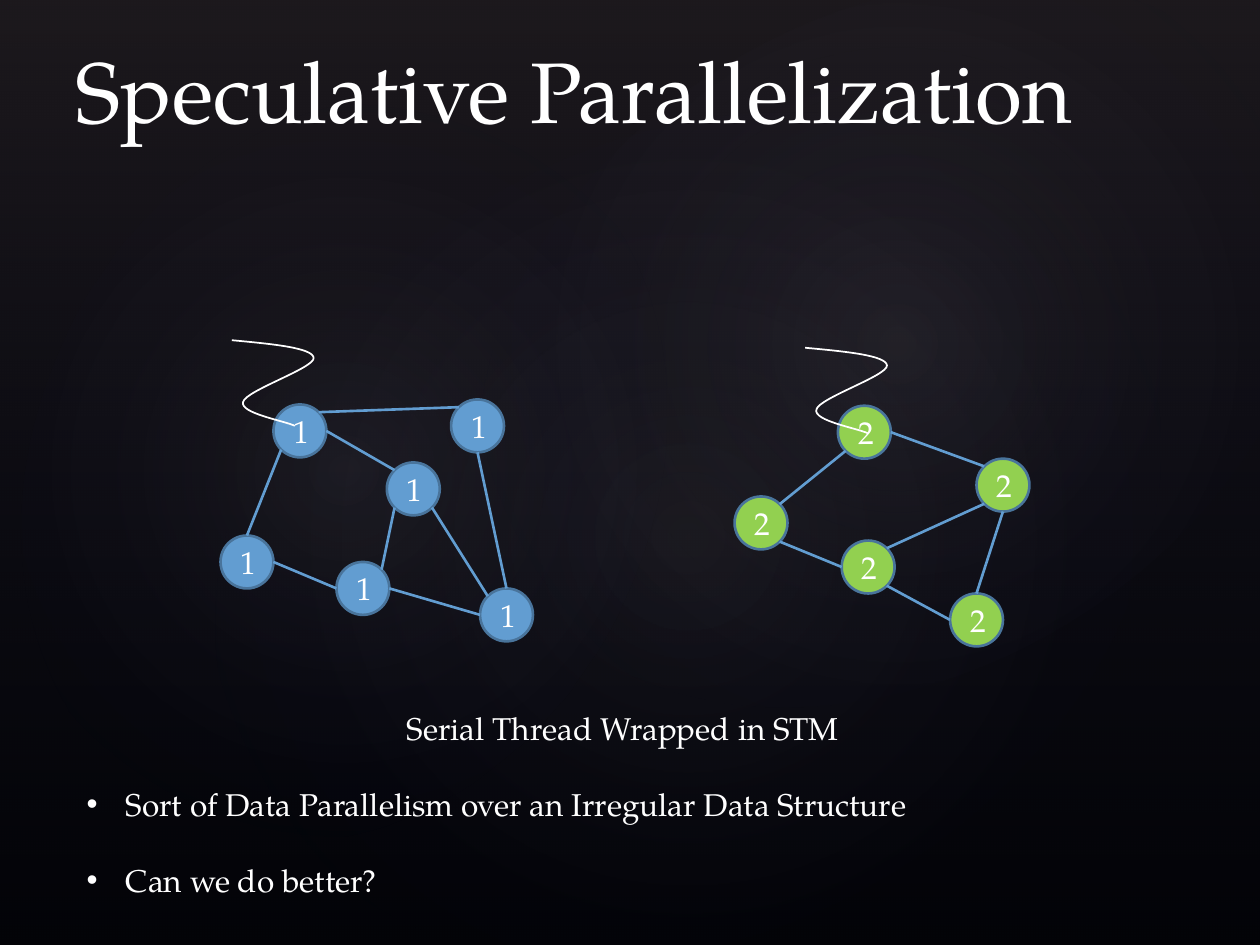
import math

import pptx
import pptx.dml.color
import pptx.enum.shapes
import pptx.enum.text
import pptx.oxml
import pptx.oxml.ns
import pptx.util
from lxml import etree

RGBColor = pptx.dml.color.RGBColor
Pt = pptx.util.Pt
ALIGN = pptx.enum.text.PP_ALIGN
ANCHOR = pptx.enum.text.MSO_ANCHOR
PRESET = pptx.enum.shapes.MSO_SHAPE
qn = pptx.oxml.ns.qn

BLACK = RGBColor(0x00, 0x00, 0x00)
WHITE = RGBColor(0xFF, 0xFF, 0xFF)
BLUE = RGBColor(0x62, 0x9D, 0xD1)
GREEN = RGBColor(0x92, 0xD0, 0x50)
OUTLINE = RGBColor(0x49, 0x74, 0x9B)
PLUM = RGBColor(0x50, 0x46, 0x52)
NAVY = RGBColor(0x24, 0x28, 0x52)
MIST = RGBColor(0xC4, 0xBC, 0xC6)

FONT = "TeX Gyre Pagella"
COLUMNS, ROWS = 100, 75
CELL = pptx.util.Inches(0.1)
NODE = 4.2
TOP, TOP_LEFT, LEFT, BOTTOM_LEFT, BOTTOM, BOTTOM_RIGHT, RIGHT, TOP_RIGHT = range(8)
DOWNWARD = '<a:lin ang="5400000" scaled="0"/>'
RADIAL = '<a:path path="circle"><a:fillToRect l="50000" t="50000" r="50000" b="50000"/></a:path>'
GLOWS = [
    ((15, 11.4, 79.2, 62.4), 328.7, 7),
    ((-3, 12.8, 60.6, 49), 294.3, 8),
    ((35.8, 1.3, 70.9, 52), 328.7, 8),
]
THREAD = [(0, 0), (3.2, 0.3), (6.4, 0.6), (6.5, 1.4), (6.6, 2.2),
          (1.1, 4), (0.9, 4.9), (0.6, 5.8), (4.2, 6.4), (5, 6.8)]


def cells(*counts):
    """Turn grid counts into lengths."""
    return [round(count * CELL) for count in counts]


def style(paragraph, size=18):
    """Give a paragraph the slide's type style."""
    paragraph.font.name = FONT
    paragraph.font.size = Pt(size)
    paragraph.font.color.rgb = WHITE


def add_tint(slide, kind, box, stops, direction, rotation=0):
    """Add a translucent gradient shape; stops are (position, colour, opacity)."""
    tint = slide.shapes.add_shape(kind, *cells(*box))
    tint.shadow.inherit = False
    tint.rotation = rotation
    tint.line.fill.background()
    tint.fill.gradient()
    marks = "".join(
        f'<a:gs pos="{position * 1000}"><a:srgbClr val="{colour}">'
        f'<a:alpha val="{opacity * 1000}"/></a:srgbClr></a:gs>'
        for position, colour, opacity in stops)
    gradient = pptx.oxml.parse_xml(
        f'<a:gradFill {pptx.oxml.ns.nsdecls("a")} rotWithShape="1">'
        f'<a:gsLst>{marks}</a:gsLst>{direction}</a:gradFill>')
    properties = tint._element.spPr
    properties.replace(properties.find(qn("a:gradFill")), gradient)


def add_backdrop(slide):
    """Paint the dark background and its soft glows."""
    slide.background.fill.solid()
    slide.background.fill.fore_color.rgb = BLACK
    add_tint(slide, PRESET.RECTANGLE, (0, 0, COLUMNS, ROWS),
             [(0, PLUM, 36), (100, NAVY, 10)], DOWNWARD)
    for box, rotation, opacity in GLOWS:
        add_tint(slide, PRESET.OVAL, box,
                 [(0, MIST, opacity), (58, NAVY, 0)], RADIAL, rotation)


def add_title(slide, box, words):
    """Place the title above the backdrop."""
    title = slide.shapes.title
    slide.shapes._spTree.append(title._element)
    title.left, title.top, title.width, title.height = cells(*box)
    title.text_frame.text = words
    title.text_frame.auto_size = pptx.enum.text.MSO_AUTO_SIZE.NONE
    title.text_frame.vertical_anchor = ANCHOR.BOTTOM
    heading = title.text_frame.paragraphs[0]
    heading.alignment = ALIGN.LEFT
    style(heading, 49)


def add_node(slide, left, top, label, colour):
    """Add one labelled graph node."""
    node = slide.shapes.add_shape(PRESET.OVAL, *cells(left, top, NODE, NODE))
    node.shadow.inherit = False
    node.fill.solid()
    node.fill.fore_color.rgb = colour
    node.line.color.rgb = OUTLINE
    node.line.width = Pt(1.5)
    node.text_frame.text = label
    node.text_frame.vertical_anchor = ANCHOR.MIDDLE
    caption = node.text_frame.paragraphs[0]
    caption.alignment = ALIGN.CENTER
    style(caption)


def rim_point(corner, site):
    """Find a point on a node's rim, counting eighths anticlockwise from the top."""
    angle = math.radians(90 + 45 * site)
    radius = NODE / 2
    return cells(corner[0] + radius + radius * math.cos(angle),
                 corner[1] + radius - radius * math.sin(angle))


def add_thread(slide, left, top):
    """Draw the curled thread as a run of cubic curves."""
    points = [cells(left + x, top + y) for x, y in THREAD]
    builder = slide.shapes.build_freeform(*points[0])
    builder.add_line_segments(points[1:], close=False)
    thread = builder.convert_to_shape()
    thread.shadow.inherit = False
    thread.fill.background()
    thread.line.color.rgb = WHITE
    thread.line.width = Pt(1)
    segments = list(thread._element.iter(qn("a:lnTo")))
    for start in range(0, len(segments), 3):
        outline = segments[start].getparent()
        curve = etree.SubElement(outline, qn("a:cubicBezTo"))
        for segment in segments[start:start + 3]:
            curve.append(segment[0])
            outline.remove(segment)


def add_graph(slide, origin, label, colour, nodes, edges, thread):
    """Draw one partition of the graph and the thread that works on it."""
    corners = [(origin[0] + x, origin[1] + y) for x, y in nodes]
    for corner in corners:
        add_node(slide, *corner, label, colour)
    for first, leaving, second, entering in edges:
        edge = slide.shapes.add_connector(
            pptx.enum.shapes.MSO_CONNECTOR.STRAIGHT,
            *rim_point(corners[first], leaving), *rim_point(corners[second], entering))
        edge.line.color.rgb = BLUE
        edge.line.width = Pt(1.5)
        etree.SubElement(edge._element.spPr, qn("a:effectLst"))
    add_thread(slide, origin[0] + thread[0], origin[1] + thread[1])


def add_text(slide, box, lines, bulleted=False):
    """Add a caption or a bulleted list."""
    frame = slide.shapes.add_textbox(*cells(*box)).text_frame
    frame.word_wrap = True
    frame.text = "\n".join(lines)
    for index, paragraph in enumerate(frame.paragraphs):
        style(paragraph)
        if bulleted:
            paragraph.space_before = Pt(21.7 if index else 0)
            properties = paragraph._p.get_or_add_pPr()
            indent = cells(3.1)[0]
            properties.set("marL", str(indent))
            properties.set("indent", str(-indent))
            face = etree.Element(qn("a:buFont"), typeface="Arial")
            bullet = etree.Element(qn("a:buChar"), char="•")
            place = properties.index(properties.find(qn("a:defRPr")))
            properties[place:place] = [face, bullet]


def main():
    """Build and save the slide."""
    deck = pptx.Presentation()
    deck.slide_width, deck.slide_height = cells(COLUMNS, ROWS)
    slide = deck.slides.add_slide(deck.slide_layouts[5])
    add_backdrop(slide)
    add_title(slide, (5, 1.7, 82.5, 10), "Speculative Parallelization")
    add_graph(
        slide, (17.5, 27), "1", BLUE,
        [(4.2, 5.1), (9.2, 17.6), (18.3, 4.7), (0, 15.5), (13.2, 9.7), (20.6, 19.7)],
        [(0, BOTTOM_LEFT, 3, TOP), (3, RIGHT, 1, LEFT), (0, RIGHT, 4, TOP_LEFT),
         (4, BOTTOM_LEFT, 1, TOP_RIGHT), (1, RIGHT, 5, LEFT), (2, BOTTOM, 5, TOP),
         (0, TOP_RIGHT, 2, TOP_LEFT), (4, BOTTOM_RIGHT, 5, TOP_LEFT)],
        (0.9, 0))
    add_graph(
        slide, (58.3, 27.6), "2", GREEN,
        [(8.2, 4.6), (0, 11.8), (8.5, 15.3), (19.2, 8.8), (17.1, 19.5)],
        [(0, BOTTOM_LEFT, 1, TOP_RIGHT), (1, BOTTOM_RIGHT, 2, LEFT),
         (2, BOTTOM_RIGHT, 4, LEFT), (3, BOTTOM, 4, TOP),
         (2, TOP_RIGHT, 3, BOTTOM_LEFT), (0, RIGHT, 3, TOP_LEFT)],
        (5.6, 0))
    add_text(slide, (31.3, 55.8, 41.6, 4), ["Serial Thread Wrapped in STM"])
    add_text(slide, (5.9, 61.8, 83.3, 10.1),
             ["Sort of Data Parallelism over an Irregular Data Structure",
              "Can we do better?"], bulleted=True)
    deck.save("out.pptx")


if __name__ == "__main__":
    main()
